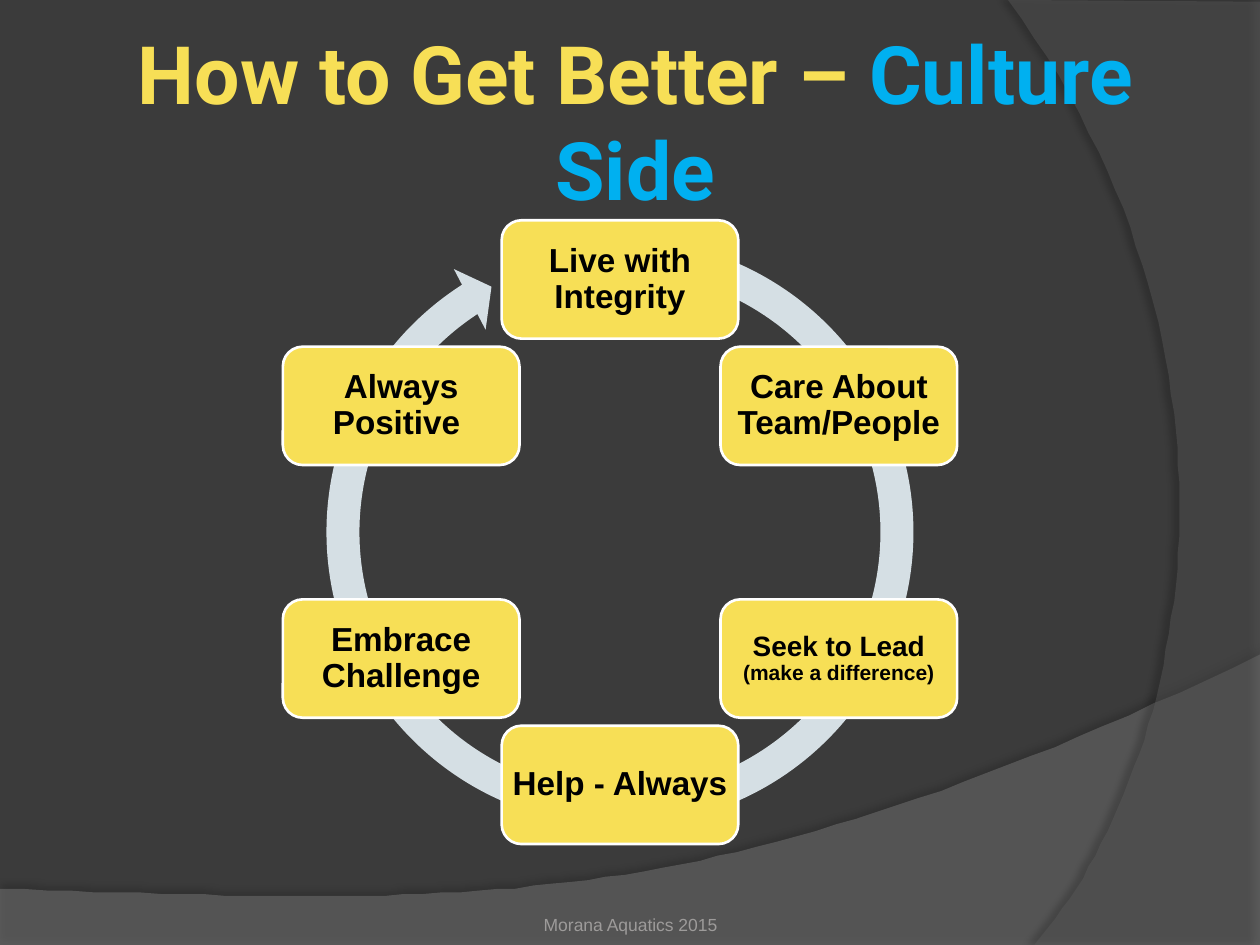
from math import cos, radians, sin

from lxml import etree
from pptx import Presentation
from pptx.dml.color import RGBColor
from pptx.enum import shapes, text
from pptx.oxml import ns
from pptx.util import Pt

YELLOW, BLUE, PALE_BLUE = "F7DF56", "00B0F0", "D5DFE4"


def color(hex_string):
    return RGBColor.from_string(hex_string)


def add_run(paragraph, words, size, hex_string, font="Arial", bold=True):
    run = paragraph.add_run()
    run.text = words
    run.font.name = font
    run.font.size = Pt(size)
    run.font.bold = bold
    run.font.color.rgb = color(hex_string)


deck = Presentation()
deck.slide_width, deck.slide_height = Pt(720), Pt(540)
slide = deck.slides.add_slide(deck.slide_layouts[6])
slide.background.fill.solid()
slide.background.fill.fore_color.rgb = color("3B3B3B")

# Background waves: corners, Bezier curve, fill, opacity %, then shadow opacity %, distance, angle
waves = [
    ([(0, 540), (720, 540)],
     [(720, 374.4), (402.48, 524.88), (281.52, 517.68), (0, 507.6)],
     "7F7F7F", 45, 35, 3.5, 270),
    ([(720, 1.44), (720, 540)],
     [(591.12, 540), (673.2, 445.68), (732.96, 216), (576, 0)],
     "5E5E5E", 40, 45, 4, 180),
]
STEPS = 60
for corners, curve, fill, opacity, shade, distance, angle in waves:
    outline = list(corners)
    for step in range(STEPS + 1):
        t = step / STEPS
        weights = ((1 - t) ** 3, 3 * t * (1 - t) ** 2, 3 * t * t * (1 - t), t ** 3)
        outline.append(tuple(sum(w * point[axis] for w, point in zip(weights, curve))
                             for axis in (0, 1)))
    builder = slide.shapes.build_freeform(*outline[0], scale=Pt(1))
    builder.add_line_segments(outline[1:], close=True)
    wave = builder.convert_to_shape()
    wave.fill.solid()
    wave.fill.fore_color.rgb = color(fill)
    wave.line.fill.background()
    fill_color = wave.fill._xPr.find(".//" + ns.qn("a:srgbClr"))
    etree.SubElement(fill_color, ns.qn("a:alpha"), val=str(opacity * 1000))
    wave.shadow.inherit = False
    effects = wave._element.spPr.find(ns.qn("a:effectLst"))
    shadow = etree.SubElement(effects, ns.qn("a:outerShdw"), blurRad=str(Pt(4)),
                              dist=str(Pt(distance)), dir=str(angle * 60000))
    shadow_color = etree.SubElement(shadow, ns.qn("a:srgbClr"), val="000000")
    etree.SubElement(shadow_color, ns.qn("a:alpha"), val=str(shade * 1000))

title = slide.shapes.add_textbox(Pt(36), Pt(23.8), Pt(653.8), Pt(90)).text_frame
title.word_wrap = True
title.vertical_anchor = text.MSO_ANCHOR.MIDDLE
title.margin_left = title.margin_right = Pt(3.6)
heading = title.paragraphs[0]
heading.alignment = text.PP_ALIGN.CENTER
add_run(heading, "How to Get Better – ", 46, YELLOW, "Roboto")
add_run(heading, "Culture Side", 46, BLUE, "Roboto")

# Cycle: one ring arrow and six habits spaced evenly, clockwise from the top
CENTER_X, CENTER_Y, RADIUS = 354.3, 304.1, 144.4
RING_SIZE = 355.7
HABIT_WIDTH, HABIT_HEIGHT = 135.2, 67.6

ring = slide.shapes.add_shape(
    shapes.MSO_SHAPE.CIRCULAR_ARROW, Pt(CENTER_X - RING_SIZE / 2),
    Pt(CENTER_Y - RING_SIZE / 2), Pt(RING_SIZE), Pt(RING_SIZE))
for index, value in enumerate((0.053, 3.126, 142.296, 171.262, 0.055)):
    ring.adjustments[index] = value
ring.fill.solid()
ring.fill.fore_color.rgb = color(PALE_BLUE)
ring.line.fill.background()
ring.shadow.inherit = False

habits = [
    [("Live with Integrity", 19)],
    [("Care About Team/People", 19)],
    [("Seek to Lead ", 16), ("(make a difference)", 12)],
    [("Help - Always", 19)],
    [("Embrace Challenge", 19)],
    [("Always Positive ", 19)],
]
for index, parts in enumerate(habits):
    turn = radians(index * 360 / len(habits) - 90)
    left = CENTER_X + RADIUS * cos(turn) - HABIT_WIDTH / 2
    top = CENTER_Y + RADIUS * sin(turn) - HABIT_HEIGHT / 2
    habit = slide.shapes.add_shape(shapes.MSO_SHAPE.ROUNDED_RECTANGLE, Pt(left), Pt(top),
                                   Pt(HABIT_WIDTH), Pt(HABIT_HEIGHT))
    habit.fill.solid()
    habit.fill.fore_color.rgb = color(YELLOW)
    habit.line.color.rgb = color("FFFFFF")
    habit.line.width = Pt(1.5)
    habit.shadow.inherit = False
    frame = habit.text_frame
    frame.word_wrap = True
    frame.vertical_anchor = text.MSO_ANCHOR.MIDDLE
    frame.margin_left = frame.margin_right = frame.margin_top = frame.margin_bottom = Pt(2)
    label = frame.paragraphs[0]
    label.alignment = text.PP_ALIGN.CENTER
    label.line_spacing = 0.9
    for words, size in parts:
        add_run(label, words, size, "000000")

footer = slide.shapes.add_textbox(Pt(246.2), Pt(505.4), Pt(228.2), Pt(28.8)).text_frame
footer.word_wrap = True
footer.vertical_anchor = text.MSO_ANCHOR.BOTTOM
footer.margin_left = footer.margin_right = footer.margin_bottom = 0
footer.paragraphs[0].alignment = text.PP_ALIGN.CENTER
add_run(footer.paragraphs[0], "Morana Aquatics 2015", 10, "9D9B9A", bold=False)

deck.save("out.pptx")
